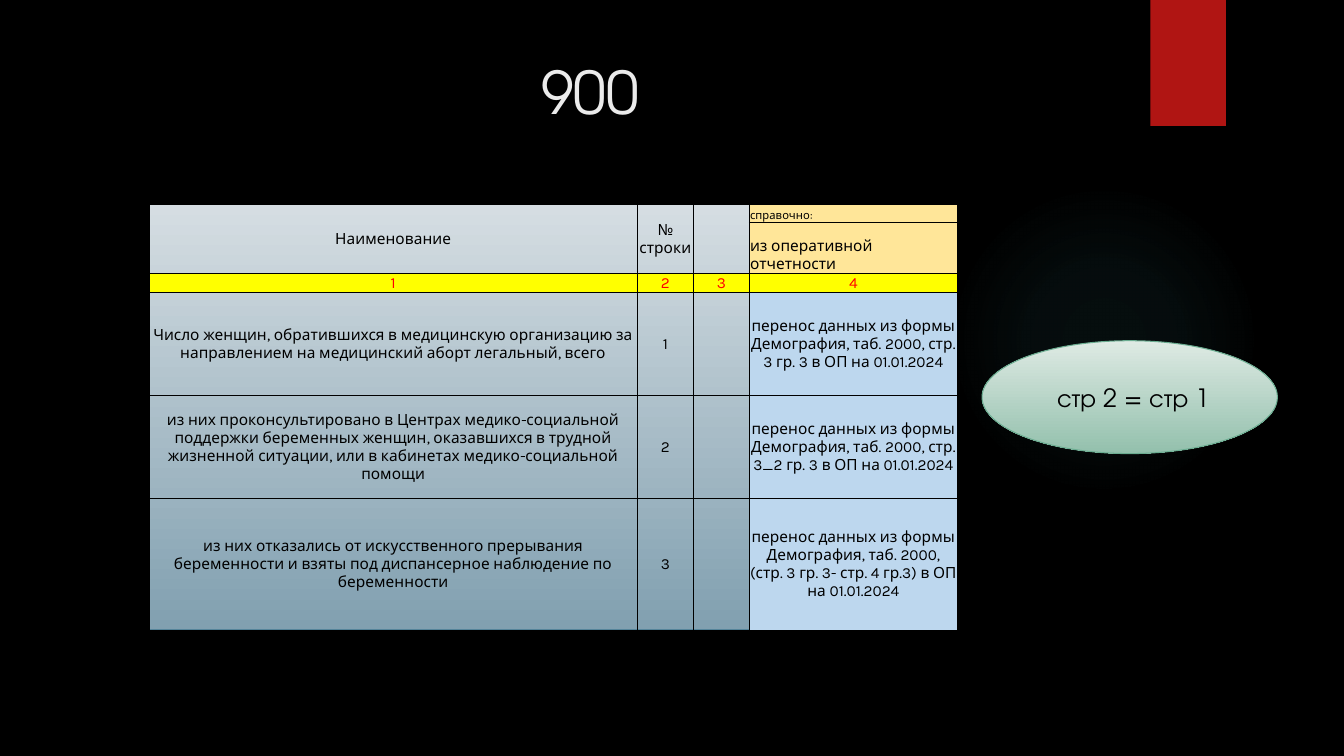
from lxml import etree
from pptx import Presentation
from pptx.dml.color import RGBColor
from pptx.enum.shapes import MSO_SHAPE as Shape
from pptx.enum.text import MSO_ANCHOR as Anchor, PP_ALIGN as Align
from pptx.oxml import parse_xml
from pptx.oxml.ns import nsdecls, qn
from pptx.util import Inches, Pt

TITLE_FONT, TABLE_FONT = "TeX Gyre Adventor", "Karla"
YELLOW, SAND, SKY = "FFFF00", "FFE699", "BDD7EE"
COLUMN_WIDTHS = [4.84, 0.56, 0.55, 2.07]
ROW_HEIGHTS = [0.18, 0.5, 0.16, 1.02, 1.02, 1.31]
ROWS = [
    ["Наименование", "№ строки", "", "справочно:"],
    ["", "", "", "из оперативной отчетности"],
    ["1", "2", "3", "4"],
    ["Число женщин, обратившихся в медицинскую организацию за направлением "
     "на медицинский аборт легальный, всего", "1", "",
     "перенос данных из формы Демография, таб. 2000, стр. 3 гр. 3 в ОП на 01.01.2024"],
    ["из них проконсультировано в Центрах медико-социальной поддержки беременных женщин, "
     "оказавшихся в трудной жизненной ситуации, или в кабинетах медико-социальной помощи",
     "2", "",
     "перенос данных из формы Демография, таб. 2000, стр. 3_2 гр. 3 в ОП на 01.01.2024"],
    ["из них отказались от искусственного прерывания беременности и взяты под "
     "диспансерное наблюдение по беременности", "3", "",
     "перенос данных из формы Демография, таб. 2000, (стр. 3 гр. 3- стр. 4 гр.3) "
     "в ОП на 01.01.2024"],
]


def rgb(color):
    return RGBColor.from_string(color)


def write(frame, text, size=11, font=TABLE_FONT, color="000000", align=Align.CENTER):
    paragraph = frame.paragraphs[0]
    paragraph.alignment = align
    if not text:
        end = etree.SubElement(paragraph._p, qn("a:endParaRPr"))
        end.set("sz", str(size * 100))
        return
    run = paragraph.add_run()
    run.text = text
    run.font.size = Pt(size)
    run.font.name = font
    run.font.color.rgb = rgb(color)


def add_shape(slide, kind, box, fill=None, line=None):
    shape = slide.shapes.add_shape(kind, *map(Inches, box))
    shape.shadow.inherit = False
    if fill:
        shape.fill.solid()
        shape.fill.fore_color.rgb = rgb(fill)
    if line:
        shape.line.color.rgb = rgb(line)
        shape.line.width = Pt(0.75)
    else:
        shape.line.fill.background()
    return shape


def set_gradient(shape, stops, direction):
    """Fill with (position, colour, opacity) stops, all in percent."""
    shape.fill.background()
    stop_xml = "".join(
        f'<a:gs pos="{position * 1000}"><a:srgbClr val="{color}">'
        f'<a:alpha val="{opacity * 1000}"/></a:srgbClr></a:gs>'
        for position, color, opacity in stops)
    properties = shape._element.spPr
    properties.replace(properties.find(qn("a:noFill")), parse_xml(
        f'<a:gradFill {nsdecls("a")} rotWithShape="1"><a:gsLst>{stop_xml}</a:gsLst>'
        f'{direction}</a:gradFill>'))


def set_vertical_gradient(shape, top, bottom):
    set_gradient(shape, [(0, top, 100), (100, bottom, 100)],
                 '<a:lin ang="5400000" scaled="0"/>')


def add_backdrop(slide):
    slide.background.fill.solid()
    slide.background.fill.fore_color.rgb = rgb("000000")
    glow = add_shape(slide, Shape.OVAL, (9.41, 1.83, 3.08, 3.08))
    set_gradient(glow, [(0, "50B9C1", 7), (36, "50B9C1", 6), (69, "50B9C1", 0)],
                 '<a:path path="circle"><a:fillToRect l="50000" t="50000" '
                 'r="50000" b="50000"/></a:path>')
    ribbon = add_shape(slide, Shape.RECTANGLE, (11.41, 0, 0.75, 1.25), fill="B01513")
    ribbon._element.spPr.find(qn("a:effectLst")).append(parse_xml(
        f'<a:outerShdw {nsdecls("a")} blurRad="38100" dist="25400" dir="5400000">'
        '<a:srgbClr val="000000"><a:alpha val="45000"/></a:srgbClr></a:outerShdw>'))


def add_title(slide, text, box):
    frame = slide.shapes.add_textbox(*map(Inches, box)).text_frame
    frame.word_wrap = True
    write(frame, text, size=42, font=TITLE_FONT, color="EBEBEB")


def add_borders(cell):
    properties = cell._tc.get_or_add_tcPr()
    for index, side in enumerate(("lnL", "lnR", "lnT", "lnB")):
        properties.insert(index, parse_xml(
            f'<a:{side} {nsdecls("a")} w="6350"><a:solidFill>'
            f'<a:srgbClr val="000000"/></a:solidFill></a:{side}>'))


def cell_fill(row, column):
    if row == 2:
        return YELLOW
    if column == 3:
        return SAND if row < 2 else SKY
    return None


def format_cell(cell, row, column):
    cell.margin_left = cell.margin_right = cell.margin_top = Inches(0.01)
    cell.margin_bottom = 0
    reference_head = column == 3 and row < 2
    cell.vertical_anchor = Anchor.BOTTOM if column == 3 and row < 3 else Anchor.MIDDLE
    write(cell.text_frame, ROWS[row][column],
          size=8 if row == 0 and column == 3 else 11,
          color="FF0000" if row == 2 else "000000",
          align=Align.LEFT if reference_head else Align.CENTER)
    fill = cell_fill(row, column)
    if fill:
        cell.fill.solid()
        cell.fill.fore_color.rgb = rgb(fill)
    else:
        cell.fill.background()
    add_borders(cell)


def add_report_table(slide, box):
    panel = add_shape(slide, Shape.RECTANGLE, box, line="54849A")
    set_vertical_gradient(panel, "D5DDE2", "81A0B0")
    table = slide.shapes.add_table(len(ROWS), len(COLUMN_WIDTHS), *map(Inches, box)).table
    table.first_row = table.horz_banding = False
    for column, width in zip(table.columns, COLUMN_WIDTHS):
        column.width = Inches(width)
    for row, height in zip(table.rows, ROW_HEIGHTS):
        row.height = Inches(height)
    for row in range(len(ROWS)):
        for column in range(len(COLUMN_WIDTHS)):
            format_cell(table.cell(row, column), row, column)
    for column in range(3):
        table.cell(0, column).merge(table.cell(1, column))


def add_rule_bubble(slide, text, box):
    bubble = add_shape(slide, Shape.OVAL, box, line="6AAC90")
    set_vertical_gradient(bubble, "DEEAE4", "93C0AC")
    bubble.text_frame.vertical_anchor = Anchor.MIDDLE
    write(bubble.text_frame, text, size=18, font=TITLE_FONT)


def main():
    presentation = Presentation()
    presentation.slide_width = Inches(13.33)
    presentation.slide_height = Inches(7.5)
    slide = presentation.slides.add_slide(presentation.slide_layouts[6])
    add_backdrop(slide)
    add_title(slide, "900", (0.71, 0.5, 10.29, 1.53))
    add_report_table(slide, (1.48, 2.03, 8.01, 4.22))
    add_rule_bubble(slide, " стр 2 = стр 1", (9.74, 3.38, 2.93, 1.12))
    presentation.save("out.pptx")


if __name__ == "__main__":
    main()
